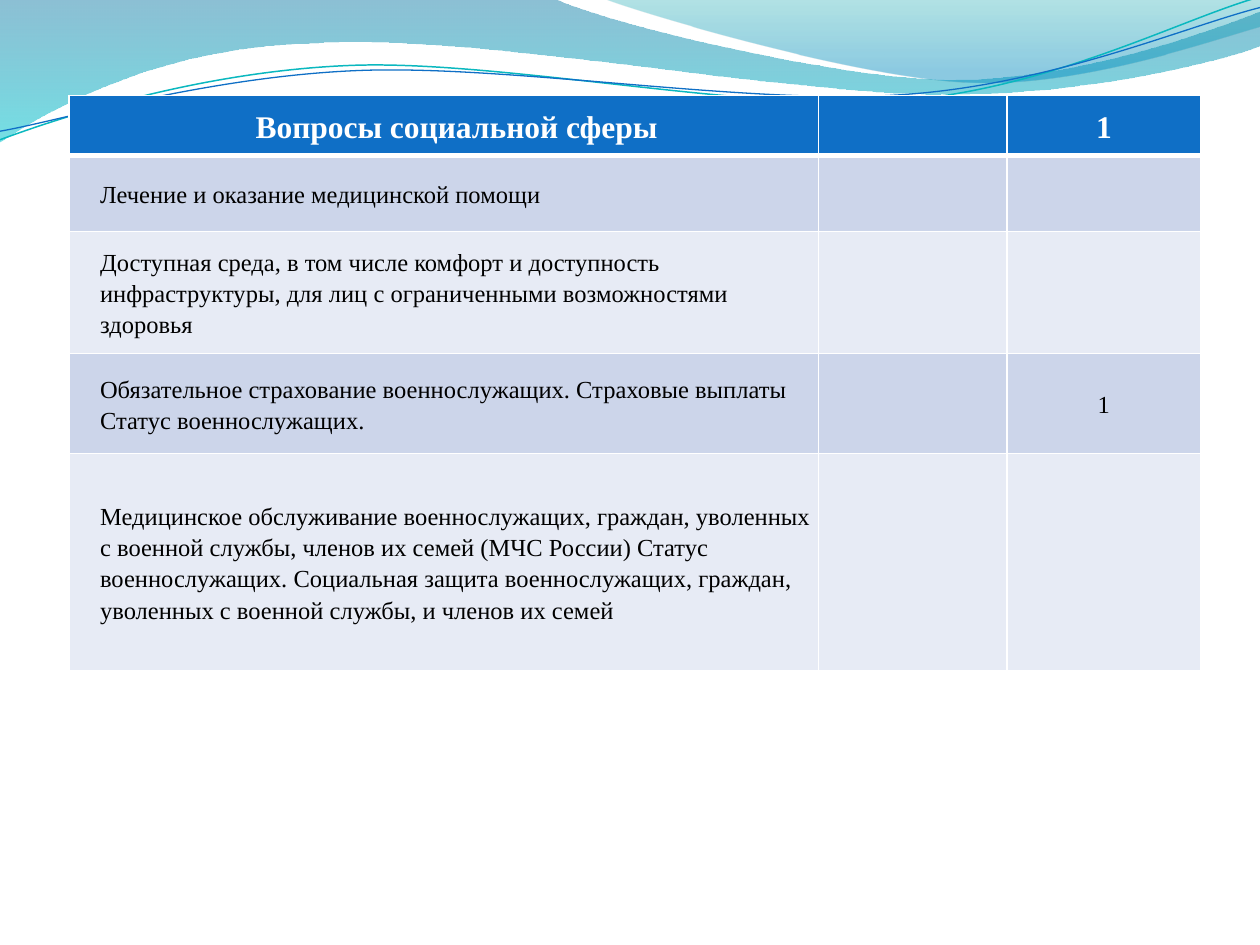
"""Build a slide with a table of social questions under a wave banner."""
from lxml import etree
from pptx import Presentation
from pptx.dml.color import RGBColor
from pptx.enum.text import MSO_ANCHOR, PP_ALIGN
from pptx.oxml.ns import qn
from pptx.util import Pt

CENTER, LEFT, MIDDLE = PP_ALIGN.CENTER, PP_ALIGN.LEFT, MSO_ANCHOR.MIDDLE
FONT = "Times New Roman"
COLORS = {
    "white": "FFFFFF", "black": "000000", "header": "0F6FC6",
    "odd": "CCD5EA", "even": "E7EBF5", "teal": "0AB8BF",
    "deep": "0074A1", "cyan": "00C6CF", "sea": "00A1A9", "sky": "008BBF",
}

ROWS = [
    ("Вопросы социальной сферы", "", "1"),
    ("Лечение и оказание медицинской помощи", "", ""),
    ("Доступная среда, в том числе комфорт и доступность инфраструктуры, "
     "для лиц с ограниченными возможностями здоровья", "", ""),
    ("Обязательное страхование военнослужащих. Страховые выплаты "
     "Статус военнослужащих.", "", "1"),
    ("Медицинское обслуживание военнослужащих, граждан, уволенных с военной "
     "службы, членов их семей (МЧС России) Статус военнослужащих. Социальная "
     "защита военнослужащих, граждан, уволенных с военной службы, и членов "
     "их семей", "", ""),
]
TABLE_LEFT, TABLE_TOP = 39.5, 54.7
COLUMN_WIDTHS = [428.2, 107.8, 110.7]
ROW_HEIGHTS = [34.1, 43.4, 69.8, 57.2, 124.1]

BANDS = [
    {"start": (0, 0),
     "steps": [[(316.8, -0.7)],
               [(342.7, 12.2), (478.1, 45.4), (545.8, 45.4)],
               [(614.2, 45.4), (689.8, 18.7), (720, 6.5)],
               [(720.7, 25.9)],
               [(707.8, 31.7), (626.4, 54.7), (537.1, 54)],
               [(447.8, 54), (275, 20.2), (185, 24.5)],
               [(92.9, 25.9), (33.1, 59.8), (-0.7, 81.4)],
               [(0, 0)]],
     "stops": [(0, "deep", 45), (1, "cyan", 55)]},
    {"start": (344.9, -0.7),
     "steps": [[(366.5, 7.9), (491, 44.6), (553.7, 46.8)],
               [(616.3, 49.7), (691.9, 23), (720, 15.1)],
               [(720, 0)],
               [(344.9, -0.7)]],
     "stops": [(0, "sea", 30), (0.8, "sky", 45)]},
]
WAVE_ROTATION = 357.3
WAVES = [
    {"start": (-1.4, 62.9),
     "steps": [[(33.8, 51.7), (114.1, 29.4), (199.8, 29.9)],
               [(284.9, 30.3), (425.8, 67.3), (512.4, 64.9)],
               [(599, 62.4), (676.5, 25.7), (720.2, 15.6)]],
     "line": ("teal", 0.85)},
    {"start": (-1.1, 58),
     "steps": [[(32.9, 53.8), (118.3, 32.5), (204.1, 33)],
               [(290.6, 33.4), (428.9, 63.8), (515.5, 61.4)],
               [(601.3, 59.6), (678.5, 30.1), (721.4, 21.3)]],
     "line": ("header", 0.75)},
]


def color(name):
    return RGBColor.from_string(COLORS[name])


def add_outline(page, outline, close):
    x, y = outline["start"]
    builder = page.shapes.build_freeform(Pt(x), Pt(y))
    points = [(Pt(x), Pt(y)) for step in outline["steps"] for x, y in step]
    builder.add_line_segments(points, close=close)
    shape = builder.convert_to_shape()
    shape.shadow.inherit = False
    segments = iter(list(shape.element.iter(qn("a:lnTo"))))
    for step in outline["steps"]:
        group = [next(segments) for _ in step]
        if len(group) == 3:
            curve = etree.Element(qn("a:cubicBezTo"))
            group[0].addprevious(curve)
            for segment in group:
                curve.append(segment[0])
                segment.getparent().remove(segment)
    return shape


def add_band(page, band):
    shape = add_outline(page, band, True)
    shape.line.fill.background()
    shape.fill.gradient()
    shape.fill.gradient_angle = 270
    for stop, (position, name, _) in zip(shape.fill.gradient_stops, band["stops"]):
        stop.position = position
        stop.color.rgb = color(name)
    for node, (_, _, opacity) in zip(shape.element.iter(qn("a:srgbClr")), band["stops"]):
        etree.SubElement(node, qn("a:alpha"), val=str(opacity * 1000))


def add_wave(page, wave):
    shape = add_outline(page, wave, False)
    shape.rotation = WAVE_ROTATION
    shape.fill.background()
    name, width = wave["line"]
    shape.line.color.rgb = color(name)
    shape.line.width = Pt(width)


def add_borders(cell, row):
    widths = {"L": 1, "R": 1, "T": 3 if row == 1 else 1, "B": 3 if row == 0 else 1}
    properties = cell._tc.get_or_add_tcPr()
    for side, width in widths.items():
        line = etree.SubElement(properties, qn(f"a:ln{side}"), w=str(Pt(width)))
        fill = etree.SubElement(line, qn("a:solidFill"))
        etree.SubElement(fill, qn("a:srgbClr"), val=COLORS["white"])


def fill_cell(cell, text, row, column):
    add_borders(cell, row)
    header = row == 0
    cell.fill.solid()
    cell.fill.fore_color.rgb = color("header" if header else "odd" if row % 2 else "even")
    if not text:
        return
    cell.vertical_anchor = MIDDLE
    cell.margin_left = Pt(2.9 if column else 17.7)
    cell.margin_right = cell.margin_top = cell.margin_bottom = Pt(2.9)
    cell.text = text
    para = cell.text_frame.paragraphs[0]
    para.alignment = CENTER if header or column else LEFT
    para.line_spacing = 1.15
    para.font.name = FONT
    para.font.size = Pt(18 if header else 14)
    para.font.bold = header
    para.font.color.rgb = color("white" if header else "black")


def add_question_table(page):
    frame = page.shapes.add_table(len(ROWS), len(COLUMN_WIDTHS), Pt(TABLE_LEFT), Pt(TABLE_TOP),
                                  Pt(sum(COLUMN_WIDTHS)), Pt(sum(ROW_HEIGHTS)))
    table = frame.table
    for column, width in zip(table.columns, COLUMN_WIDTHS):
        column.width = Pt(width)
    for row, height in zip(table.rows, ROW_HEIGHTS):
        row.height = Pt(height)
    for row, texts in enumerate(ROWS):
        for column, text in enumerate(texts):
            fill_cell(table.cell(row, column), text, row, column)


def main():
    deck = Presentation()
    deck.slide_width, deck.slide_height = Pt(720), Pt(540)
    page = deck.slides.add_slide(deck.slide_layouts[6])
    for band in BANDS:
        add_band(page, band)
    for wave in WAVES:
        add_wave(page, wave)
    add_question_table(page)
    deck.save("out.pptx")


if __name__ == "__main__":
    main()
